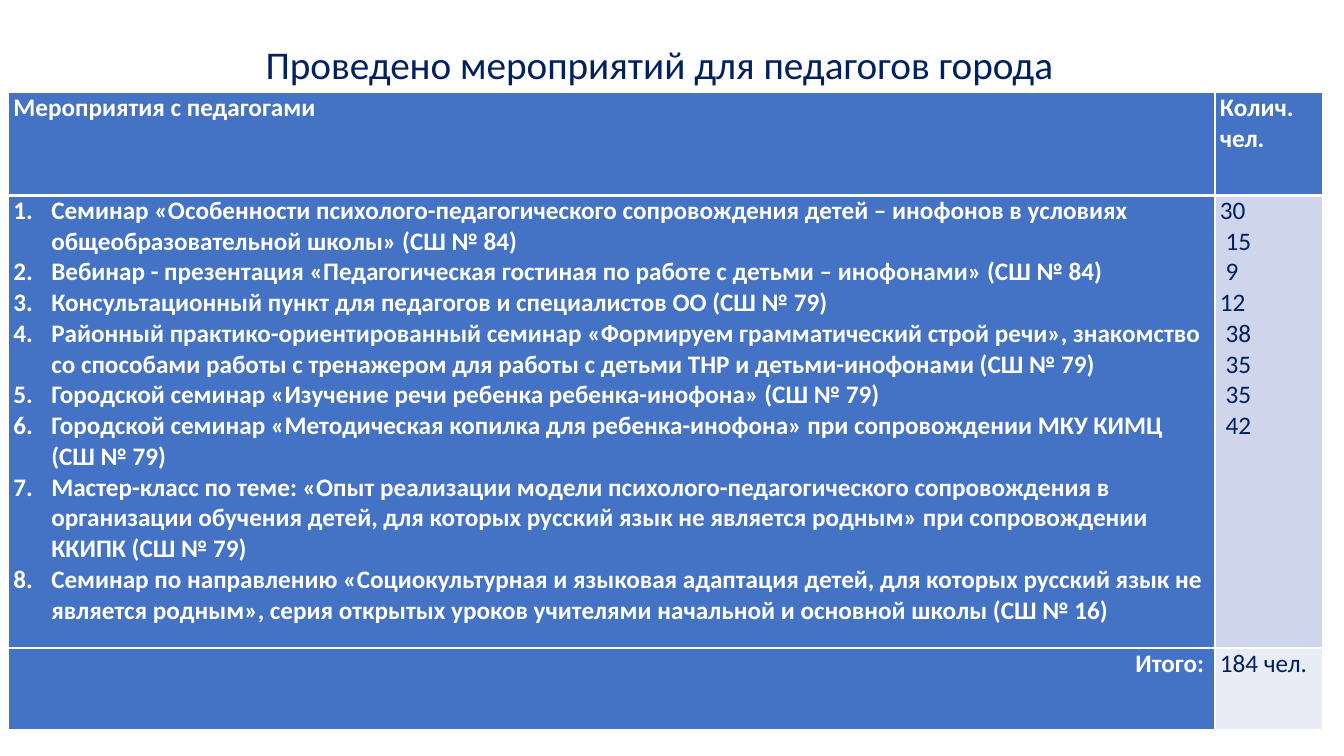
from lxml.etree import SubElement
from pptx import Presentation
from pptx.dml.color import RGBColor
from pptx.enum.text import MSO_ANCHOR, PP_ALIGN
from pptx.oxml import parse_xml
from pptx.oxml.ns import nsdecls, qn
from pptx.util import Pt

NAVY = RGBColor(0x00, 0x20, 0x60)
BLUE = RGBColor(0x44, 0x72, 0xC4)
WHITE = RGBColor(0xFF, 0xFF, 0xFF)
PALE = RGBColor(0xCF, 0xD5, 0xEA)
LIGHT = RGBColor(0xE9, 0xEB, 0xF5)

HEAD = {"size": Pt(18), "bold": True, "color": WHITE}
COUNT = {"size": Pt(18), "bold": False, "color": NAVY}
TITLE = {"size": Pt(28), "bold": False, "color": NAVY}

EVENTS = [
    "Семинар «Особенности психолого-педагогического сопровождения детей – инофонов в условиях "
    "общеобразовательной школы» (СШ № 84)",
    "Вебинар - презентация «Педагогическая гостиная по работе с детьми – инофонами» (СШ № 84)",
    "Консультационный пункт для педагогов и специалистов ОО (СШ № 79)",
    "Районный практико-ориентированный семинар «Формируем грамматический строй речи», знакомство "
    "со способами работы с тренажером для работы с детьми ТНР и детьми-инофонами (СШ № 79)",
    "Городской семинар «Изучение речи ребенка ребенка-инофона» (СШ № 79)",
    "Городской семинар «Методическая копилка для ребенка-инофона» при сопровождении МКУ КИМЦ "
    "(СШ № 79)",
    "Мастер-класс по теме: «Опыт реализации модели психолого-педагогического сопровождения в "
    "организации обучения детей, для которых русский язык не является родным» при сопровождении "
    "ККИПК (СШ № 79)",
    "Семинар по направлению «Социокультурная и языковая адаптация детей, для которых русский язык "
    "не является родным», серия открытых уроков учителями начальной и основной школы (СШ № 16)",
]
COUNTS = ["30", "15", "9", "12", "38", "35", "35", "42"]
FLUSH = {"30", "12"}


class Deck:
    def __init__(self, font):
        self.font = font
        self.prs = Presentation()
        self.prs.slide_width, self.prs.slide_height = Pt(960), Pt(540)
        self.slide = self.prs.slides.add_slide(self.prs.slide_layouts[5])

    def text(self, frame, lines, style, align=PP_ALIGN.LEFT):
        for i, line in enumerate(lines):
            para = frame.paragraphs[0] if i == 0 else frame.add_paragraph()
            para.alignment = align
            run = para.add_run()
            run.text = line
            run.font.name = self.font
            for key, value in style.items():
                if key == "color":
                    run.font.color.rgb = value
                else:
                    setattr(run.font, key, value)

    def title(self, text, box, style):
        shape = self.slide.shapes.title
        for key, value in zip(("left", "top", "width", "height"), box):
            setattr(shape, key, Pt(value))
        shape.text_frame.vertical_anchor = MSO_ANCHOR.MIDDLE
        self.text(shape.text_frame, [text], style, PP_ALIGN.CENTER)

    def table(self, left, top, widths, heights):
        frame = self.slide.shapes.add_table(
            len(heights), len(widths), Pt(left), Pt(top), Pt(sum(widths)), Pt(sum(heights)))
        grid = frame.table
        for col, width in zip(grid.columns, widths):
            col.width = Pt(width)
        for row, height in zip(grid.rows, heights):
            row.height = Pt(height)
        return grid

    def cell(self, cell, lines, fill, style, edges, align=PP_ALIGN.LEFT):
        """Fill a cell; edges gives line widths for left, right, top, bottom."""
        margins = {"margin_left": 3.6, "margin_right": 3.6, "margin_top": 0, "margin_bottom": 0}
        for key, value in margins.items():
            setattr(cell, key, Pt(value))
        cell.fill.solid()
        cell.fill.fore_color.rgb = fill
        self.text(cell.text_frame, lines, style, align)
        props = cell._tc.get_or_add_tcPr()
        for i, (side, width) in enumerate(zip("LRTB", edges)):
            props.insert(i, parse_xml(
                f'<a:ln{side} {nsdecls("a")} w="{Pt(width)}"><a:solidFill>'
                f'<a:srgbClr val="{WHITE}"/></a:solidFill></a:ln{side}>'))

    def indent(self, para, left, number=False):
        props = para._p.get_or_add_pPr()
        props.set("marL", str(Pt(left)))
        props.set("indent", str(Pt(-left if number else 0)))
        if number:
            SubElement(props, qn("a:buAutoNum"), type="arabicPeriod")


def main():
    deck = Deck("Calibri")
    deck.title("Проведено мероприятий для педагогов города", (49.7, 25.2, 842.4, 41), TITLE)
    grid = deck.table(6, 66.2, (861.8, 77), (73.4, 323.3, 58.3))
    rows = [
        (["Мероприятия с педагогами"], ["Колич. чел."], BLUE, HEAD, (1, 1, 1, 3), PP_ALIGN.LEFT),
        (EVENTS, COUNTS, PALE, COUNT, (1, 1, 3, 1), PP_ALIGN.LEFT),
        (["Итого: "], ["184 чел."], LIGHT, COUNT, (1, 1, 1, 1), PP_ALIGN.RIGHT),
    ]
    for i, (names, sums, fill, style, edges, align) in enumerate(rows):
        deck.cell(grid.cell(i, 0), names, BLUE, HEAD, edges, align)
        deck.cell(grid.cell(i, 1), sums, fill, style, edges)
    for para in grid.cell(1, 0).text_frame.paragraphs:
        deck.indent(para, 27, number=True)
    for para in grid.cell(1, 1).text_frame.paragraphs:
        if para.text not in FLUSH:
            deck.indent(para, 4)
    deck.prs.save("out.pptx")


if __name__ == "__main__":
    main()
